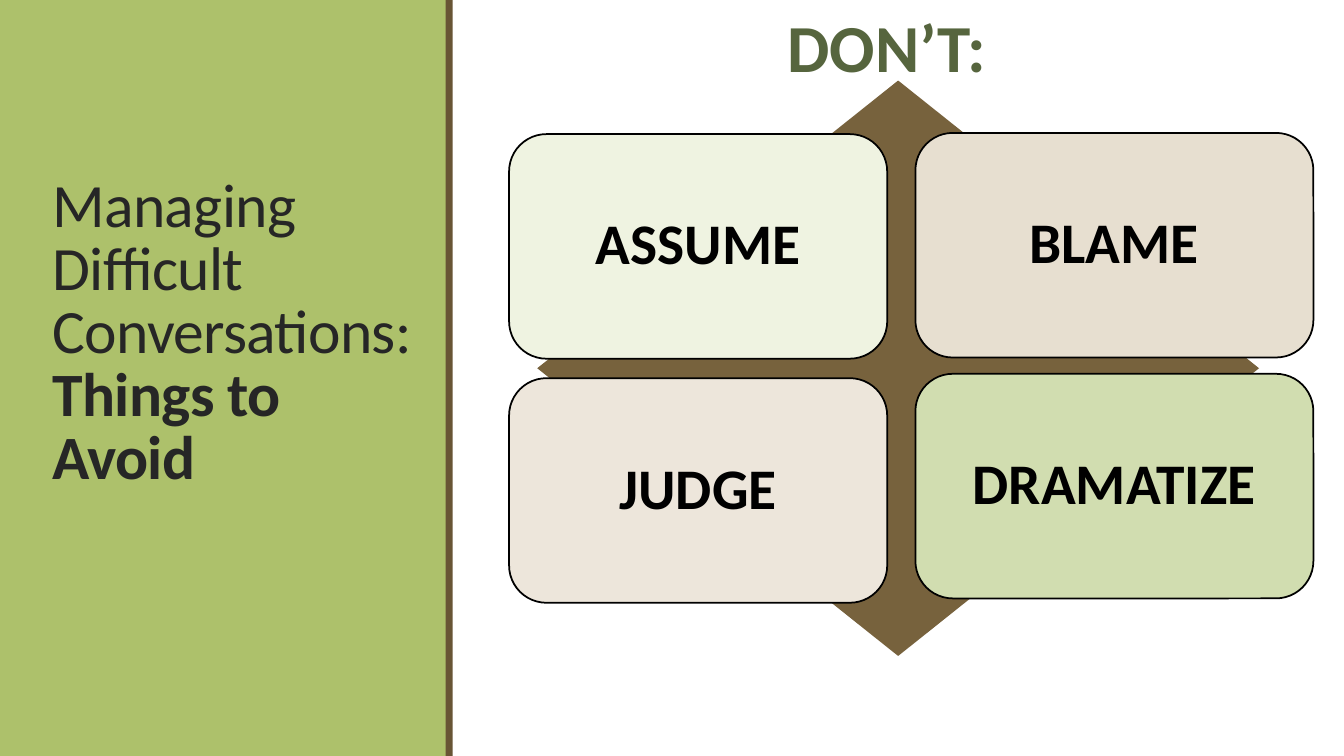
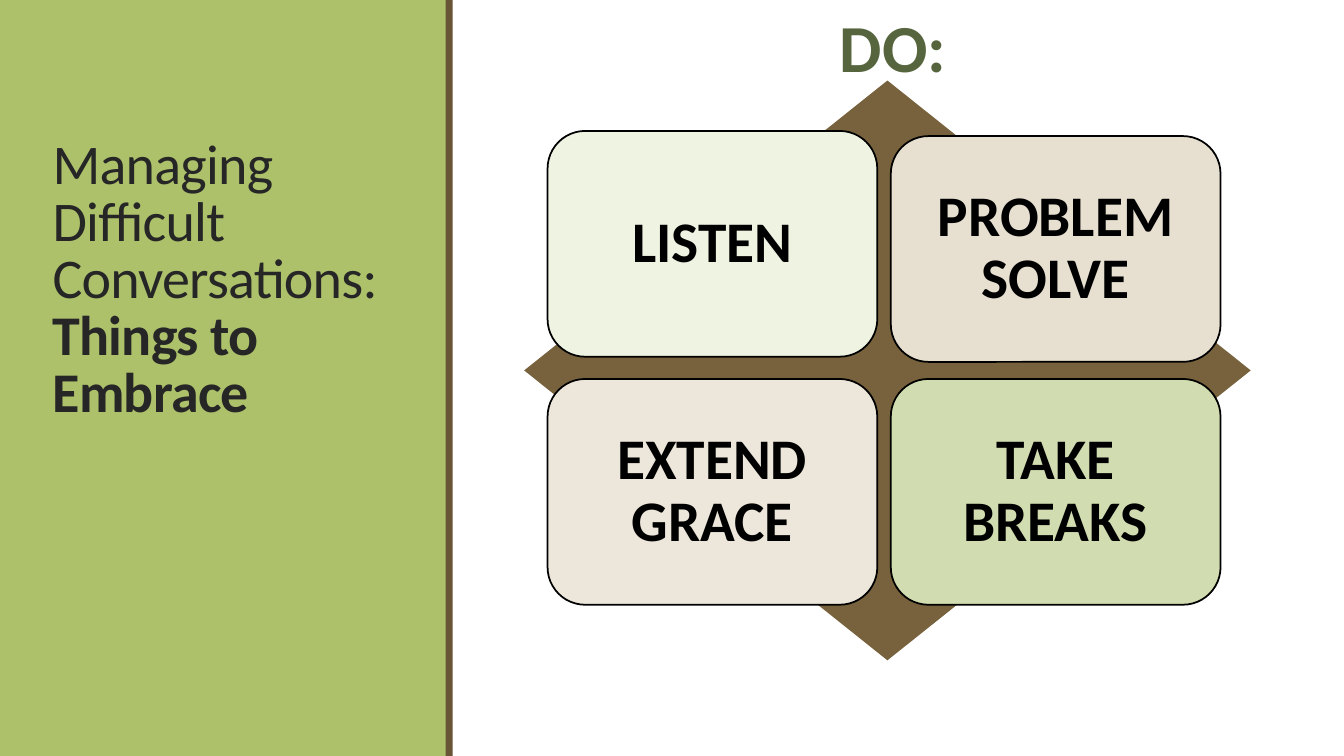
from pptx import Presentation
from pptx import util as u
from pptx.dml.color import RGBColor
from pptx.enum import shapes, text

FONT = "Calibri"
GREEN, BROWN, DIAMOND = "ADC16B", "685535", "77623D"
HEADING, TITLE, BLACK = "56653E", "262626", "000000"
CARD_FILLS = ("EFF3E1", "E7DFD0", "EDE6DB", "D1DDB0")
TITLE_ONLY = 5


def color(value):
    return RGBColor.from_string(value)


def lengths(box):
    return [u.Cm(value) for value in box]


def add_box(parent, kind, box, fill, line=None):
    """Add a flat preset shape, with an outline only if a line colour is given."""
    shape = parent.add_shape(kind, *lengths(box))
    shape.shadow.inherit = False
    shape.fill.solid()
    shape.fill.fore_color.rgb = color(fill)
    if line:
        shape.line.color.rgb = color(line)
        shape.line.width = u.Pt(1.25)
    else:
        shape.line.fill.background()
    return shape


def style(para, size, fill, bold, align, spacing=1.0):
    para.alignment = align
    para.line_spacing = spacing
    for span in para.runs:
        span.font.name = FONT
        span.font.size = u.Pt(size)
        span.font.bold = bold
        span.font.color.rgb = color(fill)


def add_bands(page):
    """Draw the side bands and move them to the layout, behind its placeholders."""
    kind = shapes.MSO_SHAPE.RECTANGLE
    bands = (((0, 0, 11.25, 19.05), GREEN), ((11.23, 0, 0.18, 19.05), BROWN))
    for index, (box, fill) in enumerate(bands):
        band = add_box(page.shapes, kind, box, fill)
        band._element.nvSpPr.cNvPr.set("id", str(20 + index))
        page.slide_layout.shapes._spTree.insert(2 + index, band._element)


def add_title(page, box, lines, size):
    """Fill the title placeholder; its last line is bold."""
    title = page.shapes.title
    title.left, title.top, title.width, title.height = lengths(box)
    frame = title.text_frame
    frame.text = "\n".join(lines)
    frame.word_wrap = True
    frame.auto_size = text.MSO_AUTO_SIZE.NONE
    frame.vertical_anchor = text.MSO_ANCHOR.BOTTOM
    for para in frame.paragraphs:
        last = para.text == lines[-1]
        style(para, size, TITLE, last, text.PP_ALIGN.LEFT, 0.85)
        for span in para.runs:
            span._r.get_or_add_rPr().set("spc", "-50")


def add_heading(page, left, words):
    heading = page.shapes.add_textbox(*lengths((left, 0, 22.71, 2.31)))
    frame = heading.text_frame
    frame.word_wrap = True
    frame.text = words
    style(frame.paragraphs[0], 48, HEADING, True, text.PP_ALIGN.CENTER)


def add_matrix(page, box, columns, tops, height, labels):
    """Place four cards over a diamond; card offsets count from its box."""
    group = page.shapes.add_group_shape()
    add_box(group.shapes, shapes.MSO_SHAPE.DIAMOND, box, DIAMOND)
    for index, (label, fill) in enumerate(zip(labels, CARD_FILLS)):
        offset, width = columns[index % 2]
        place = (box[0] + offset, box[1] + tops[index], width, height)
        card = add_box(group.shapes, shapes.MSO_SHAPE.ROUNDED_RECTANGLE,
                       place, fill, BLACK)
        frame = card.text_frame
        frame.word_wrap = True
        frame.vertical_anchor = text.MSO_ANCHOR.MIDDLE
        frame.margin_left = frame.margin_right = u.Cm(0.43)
        frame.margin_top = frame.margin_bottom = u.Cm(0.43)
        frame.text = label
        style(frame.paragraphs[0], 41, BLACK, True, text.PP_ALIGN.CENTER, 0.9)


def main():
    deck = Presentation()
    deck.slide_width, deck.slide_height = u.Cm(33.87), u.Cm(19.05)
    layout = deck.slide_layouts[TITLE_ONLY]

    # Things to avoid
    page = deck.slides.add_slide(layout)
    add_bands(page)
    add_title(page, (1.07, 1.52, 9.65, 11),
              ("Managing Difficult Conversations:", "Things to Avoid"), 44)
    add_heading(page, 11, "DON’T:")
    add_matrix(page, (13.54, 2.03, 18.19, 14.5),
               columns=((-0.71, 9.53), (9.53, 10.03)),
               tops=(1.35, 1.32, 7.5, 7.39), height=5.66,
               labels=("ASSUME", "BLAME", "JUDGE", "DRAMATIZE"))

    # Things to embrace
    page = deck.slides.add_slide(layout)
    add_title(page, (1.07, 3.2, 8.89, 7.62),
              ("Managing", "Difficult Conversations:", "Things to Embrace"), 40)
    add_heading(page, 11.15, "DO:")
    add_matrix(page, (13.21, 2.03, 18.31, 14.61),
               columns=((0.59, 8.31), (9.24, 8.31)),
               tops=(1.27, 1.4, 7.52, 7.52), height=5.69,
               labels=("LISTEN", "PROBLEM SOLVE", "EXTEND GRACE", "TAKE BREAKS"))

    deck.save("out.pptx")


if __name__ == "__main__":
    main()
